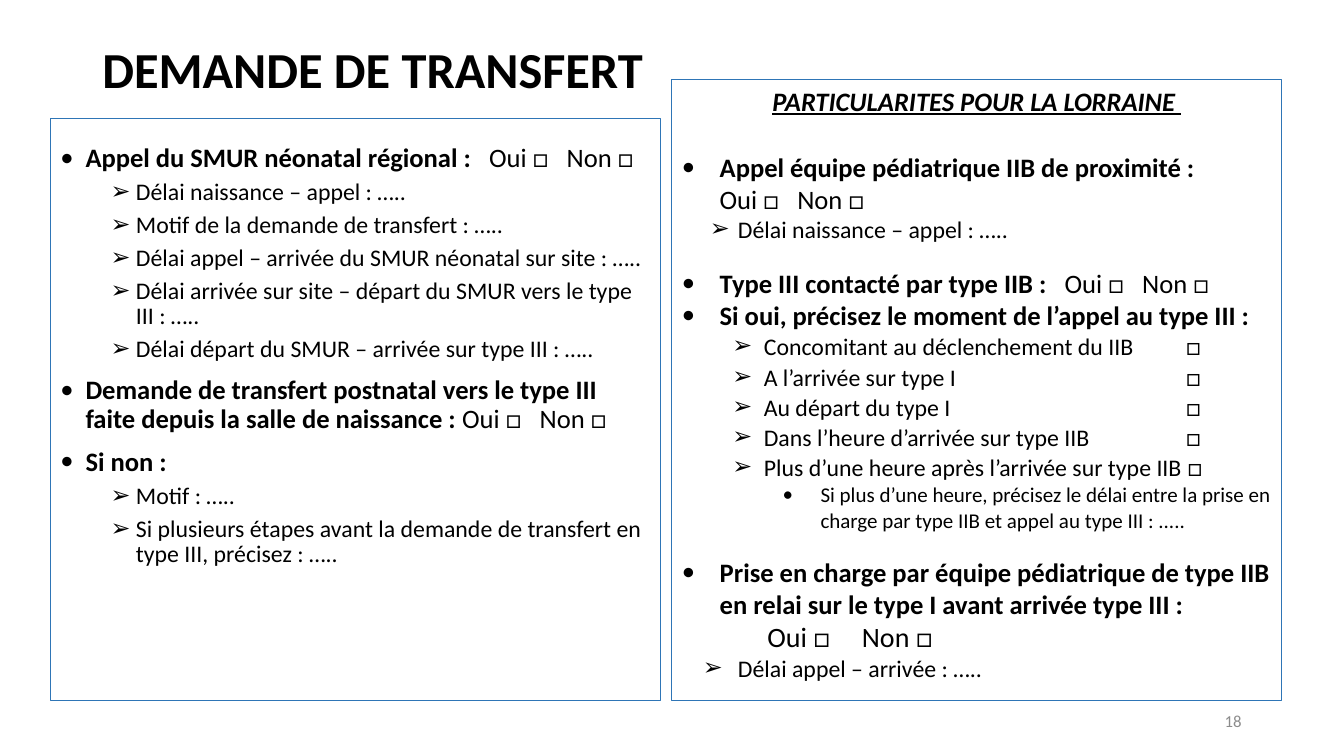
"""Build the slide on the neonatal transfer request."""
import pptx
import pptx.dml.color
import pptx.enum.shapes
import pptx.enum.text
import pptx.oxml.ns
import pptx.util
from lxml import etree

Pt = pptx.util.Pt
RGB = pptx.dml.color.RGBColor.from_string
ALIGN = pptx.enum.text.PP_ALIGN
ANCHOR = pptx.enum.text.MSO_ANCHOR
COLORS = {"text": "000000", "border": "2E75B6", "number": "8C8C8C"}

STYLES = {
    "title": dict(size=36, bold=True, spacing=0.9),
    "number": dict(size=12, color="number", align=ALIGN.RIGHT),
    "heading": dict(size=19, bold=True, italic=True, underline=True, align=ALIGN.CENTER),
    "left_main": dict(size=19, bold=True, bullet="•", left=18, hang=18, spacing=0.9, before=10),
    "left_sub": dict(size=17, bullet="➢", left=54, hang=18, spacing=0.9, before=5),
    "main": dict(size=19, bold=True, bullet="•", left=27, hang=27),
    "delay": dict(size=17, bullet="➢", left=40, hang=20),
    "late_delay": dict(size=17, bullet="➢", left=40, hang=25),
    "moment": dict(size=17, bullet="➢", left=58.5, hang=22.5, tab=360),
    "detail": dict(size=15, bullet="•", left=99, hang=27),
    "answer": dict(size=20, left=61),
}
YES_NO = ("Oui □   Non □", dict(bold=False))
BOX = ("□", dict(size=18))

LEFT = [
    ("left_main", ["Appel du SMUR néonatal régional :   ", YES_NO]),
    ("left_sub", ["Délai naissance – appel : ….."]),
    ("left_sub", ["Motif de la demande de transfert : ….."]),
    ("left_sub", ["Délai appel – arrivée du SMUR néonatal sur site : ….."]),
    ("left_sub", ["Délai arrivée sur site – départ du SMUR vers le type III : ….."]),
    ("left_sub", ["Délai départ du SMUR – arrivée sur type III : ….."]),
    ("left_main", ["Demande de transfert postnatal vers le type III faite depuis la salle de naissance : ", YES_NO]),
    ("left_main", ["Si non :"]),
    ("left_sub", ["Motif : ….."]),
    ("left_sub", ["Si plusieurs étapes avant la demande de transfert en type III, précisez : ….."]),
]
RIGHT = [
    ("heading", ["PARTICULARITES POUR LA LORRAINE "]),
    ("main", ["Appel équipe pédiatrique IIB de proximité :", "\v", YES_NO], 24.4),
    ("delay", ["Délai naissance – appel : ….."]),
    ("main", ["Type III contacté par type IIB :   ", YES_NO], 17),
    ("main", ["Si oui, précisez le moment de l’appel au type III :"]),
    ("moment", ["Concomitant au déclenchement du IIB\t", BOX]),
    ("moment", ["A l’arrivée sur type I\t", BOX]),
    ("moment", ["Au départ du type I\t", BOX]),
    ("moment", ["Dans l’heure d’arrivée sur type IIB\t", BOX]),
    ("moment", ["Plus d’une heure après l’arrivée sur type IIB ", BOX]),
    ("detail", ["Si plus d’une heure, précisez le délai entre la prise en charge par type IIB et appel au type III : ....."]),
    ("main", ["Prise en charge par équipe pédiatrique de type IIB en relai sur le type I avant arrivée type III :"], 17),
    ("answer", ["Oui □     Non □"]),
    ("late_delay", ["Délai appel – arrivée : ….."]),
]


def sub(parent, tag, **attrs):
    """Append a DrawingML element."""
    return etree.SubElement(parent, pptx.oxml.ns.qn(tag), attrs)


def write(sp, paragraphs, **frame):
    """Fill a shape with styled paragraphs."""
    tf = sp.text_frame
    settings = dict(word_wrap=True, vertical_anchor=ANCHOR.TOP) | frame
    for name, value in settings.items():
        setattr(tf, name, value)
    for i, (name, parts, *gap) in enumerate(paragraphs):
        style = STYLES[name]
        p = tf.paragraphs[0] if i == 0 else tf.add_paragraph()
        before = gap[0] if gap else style.get("before", 0)
        layout = dict(alignment=style.get("align", ALIGN.LEFT),
                      line_spacing=style.get("spacing", 1.0),
                      space_before=Pt(before if i else 0))
        for key, value in layout.items():
            setattr(p, key, value)
        pPr = p._p.get_or_add_pPr()
        pPr.set("marL", str(Pt(style.get("left", 0))))
        pPr.set("indent", str(-Pt(style.get("hang", 0))))
        if "bullet" in style:
            sub(pPr, "a:buFont", typeface="Calibri")
            sub(pPr, "a:buChar", char=style["bullet"])
        if "tab" in style:
            sub(sub(pPr, "a:tabLst"), "a:tab", pos=str(Pt(style["tab"])), algn="l")
        for part in parts:
            if part == "\v":
                p.add_line_break()
                continue
            text, change = (part, {}) if isinstance(part, str) else part
            look = style | change
            r = p.add_run()
            r.text = text
            font = dict(name="Calibri", size=Pt(look["size"]), bold=look.get("bold", False),
                        italic=look.get("italic", False), underline=look.get("underline", False))
            for key, value in font.items():
                setattr(r.font, key, value)
            r.font.color.rgb = RGB(COLORS[look.get("color", "text")])


prs = pptx.Presentation()
prs.slide_width, prs.slide_height = Pt(960), Pt(540)
s = prs.slides.add_slide(prs.slide_layouts[6])

number = s.shapes.add_textbox(Pt(678), Pt(500.5), Pt(216), Pt(28.8))
write(number, [("number", ["18"])], vertical_anchor=ANCHOR.MIDDLE)

title = s.shapes.add_textbox(Pt(66), Pt(28.8), Pt(828), Pt(56))
write(title, [("title", ["DEMANDE DE TRANSFERT"])])

bottom = 500.4
for x, y, inset, paragraphs in [(36, 84.4, 19, LEFT), (480, 56.9, 3.6, RIGHT)]:
    sp = s.shapes.add_shape(pptx.enum.shapes.MSO_SHAPE.RECTANGLE,
                            Pt(x), Pt(y), Pt(435.6), Pt(bottom - y))
    sp.shadow.inherit = False
    sp.fill.background()
    sp.line.color.rgb = RGB(COLORS["border"])
    sp.line.width = Pt(0.75)
    write(sp, paragraphs, margin_top=Pt(inset))

prs.save("out.pptx")
